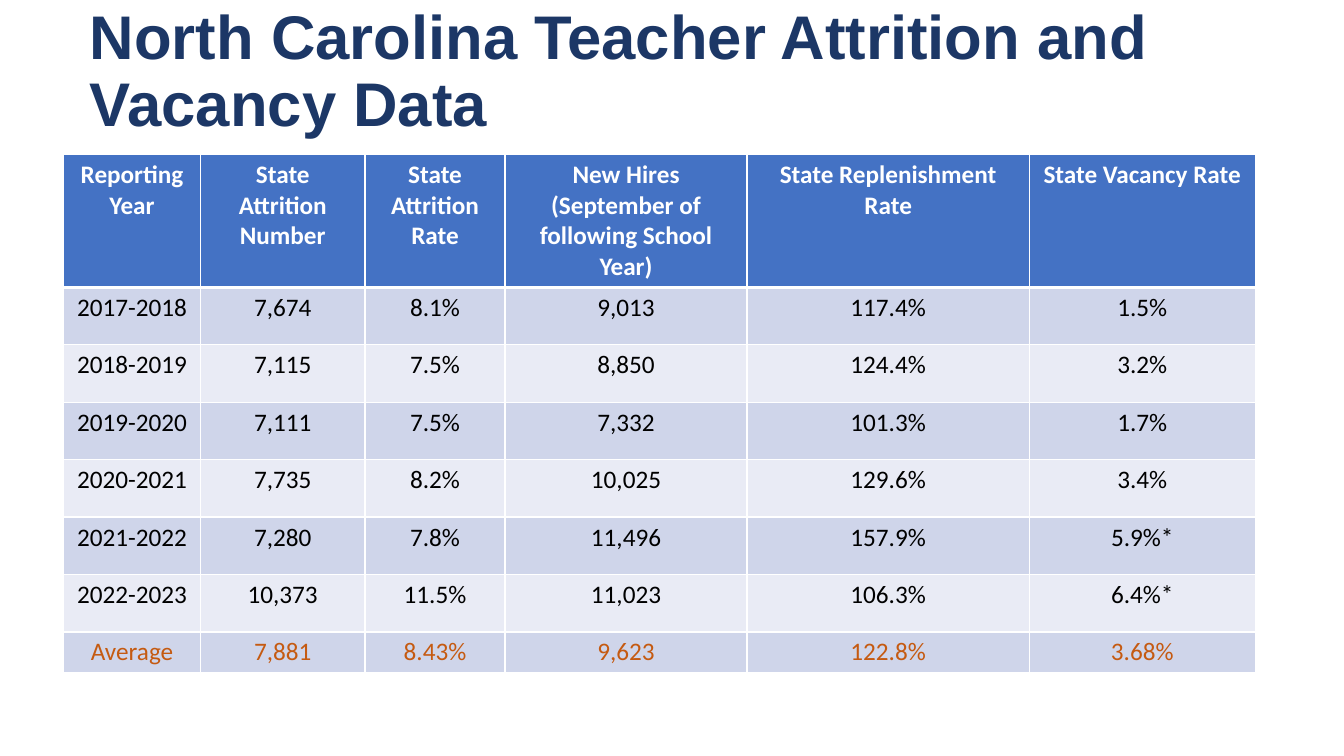
from dataclasses import dataclass

from pptx import Presentation
from pptx.dml.color import RGBColor as RGB
from pptx.enum.text import MSO_ANCHOR as Anchor, MSO_AUTO_SIZE as AutoSize, PP_ALIGN as Align
from pptx.oxml import parse_xml
from pptx.oxml.ns import nsdecls
from pptx.util import Inches, Pt


@dataclass(frozen=True)
class Theme:
    navy: str = "1C3766"
    blue: str = "4472C4"
    bands: tuple = ("CFD5EA", "E9EBF5")
    white: str = "FFFFFF"
    black: str = "000000"
    orange: str = "C55A11"
    title_font: str = "Arial"
    table_font: str = "Calibri"
    title_size: int = 44
    table_size: int = 18


theme = Theme()


def format_text(p, color, **values):
    for name, value in values.items():
        setattr(p.font, name, value)
    p.font.color.rgb = RGB.from_string(color)


def add_borders(cell, widths):
    tc_pr = cell._tc.get_or_add_tcPr()
    for side, width in widths.items():
        tc_pr.append(parse_xml(
            f'<a:ln{side} {nsdecls("a")} w="{Pt(width)}"><a:solidFill>'
            f'<a:srgbClr val="{theme.white}"/></a:solidFill></a:ln{side}>'))


prs = Presentation()
prs.slide_width, prs.slide_height = Inches(13.33), Inches(7.5)
s = prs.slides.add_slide(prs.slide_layouts[5])

# Title
title = s.shapes.title
title.left, title.top = Inches(0.79), Inches(0)
title.width, title.height = Inches(11.5), Inches(1.45)
tf = title.text_frame
tf.text = "North Carolina Teacher Attrition and Vacancy Data"
for name, value in {"word_wrap": True, "auto_size": AutoSize.NONE,
                    "vertical_anchor": Anchor.MIDDLE}.items():
    setattr(tf, name, value)
p = tf.paragraphs[0]
p.alignment, p.line_spacing = Align.LEFT, 0.9
format_text(p, theme.navy, name=theme.title_font, size=Pt(theme.title_size), bold=True)

# Attrition data
rows = [
    ("Reporting Year", "State Attrition Number", "State Attrition Rate",
     "New Hires (September of following School Year)",
     "State Replenishment Rate", "State Vacancy Rate"),
    ("2017-2018", "7,674", "8.1%", "9,013", "117.4%", "1.5%"),
    ("2018-2019", "7,115", "7.5%", "8,850", "124.4%", "3.2%"),
    ("2019-2020", "7,111", "7.5%", "7,332", "101.3%", "1.7%"),
    ("2020-2021", "7,735", "8.2%", "10,025", "129.6%", "3.4%"),
    ("2021-2022", "7,280", "7.8%", "11,496", "157.9%", "5.9%*"),
    ("2022-2023", "10,373", "11.5%", "11,023", "106.3%", "6.4%*"),
    ("Average", "7,881", "8.43%", "9,623", "122.8%", "3.68%"),
]
col_widths = [1.36, 1.63, 1.39, 2.4, 2.8, 2.24]
row_heights = [1.31] + [0.57] * 6 + [0.4]
last = len(rows) - 1

# Table
table = s.shapes.add_table(len(rows), len(col_widths), Inches(0.63), Inches(1.53),
                           Inches(sum(col_widths)), Inches(sum(row_heights))).table
for col, width in zip(table.columns, col_widths):
    col.width = Inches(width)
for row, height in zip(table.rows, row_heights):
    row.height = Inches(height)

for i, values in enumerate(rows):
    header = i == 0
    fill = theme.blue if header else theme.bands[(i - 1) % 2]
    color = theme.white if header else theme.orange if i == last else theme.black
    widths = {"L": 1, "R": 1, "T": 3 if i == 1 else 1, "B": 3 if header else 1}
    for j, value in enumerate(values):
        cell = table.cell(i, j)
        add_borders(cell, widths)
        cell.fill.solid()
        cell.fill.fore_color.rgb = RGB.from_string(fill)
        cell.text = value
        p = cell.text_frame.paragraphs[0]
        p.alignment = Align.CENTER
        format_text(p, color, name=theme.table_font, size=Pt(theme.table_size), bold=header)

prs.save("out.pptx")
